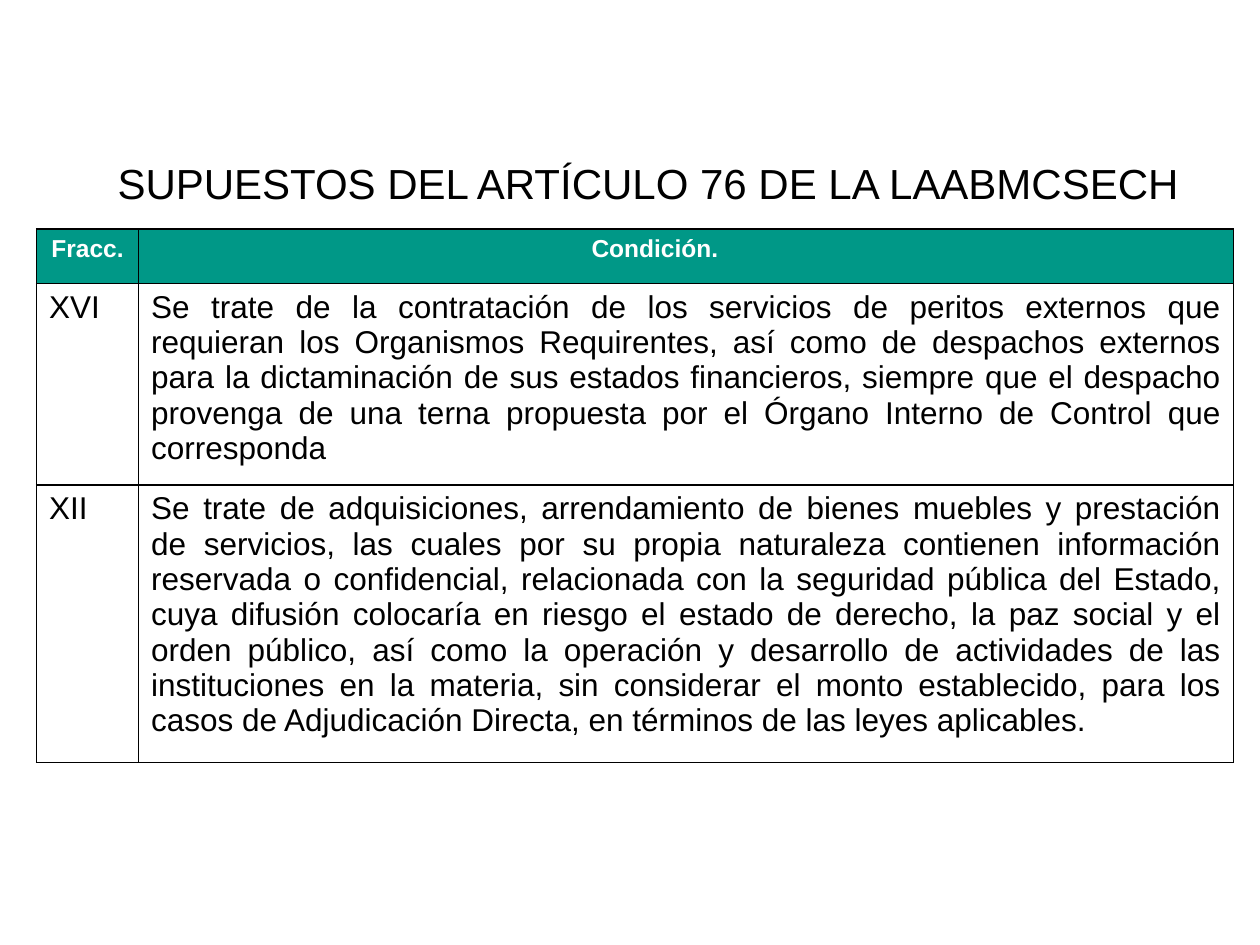
"""Build the slide listing the cases of article 76."""
from dataclasses import dataclass

import pptx
import pptx.dml.color
import pptx.enum.text
import pptx.oxml
import pptx.oxml.ns
import pptx.table
import pptx.util
from pptx.dml.color import RGBColor
from pptx.enum.text import PP_ALIGN
from pptx.util import Pt

BLACK = RGBColor(0x00, 0x00, 0x00)
WHITE = RGBColor(0xFF, 0xFF, 0xFF)
TEAL = RGBColor(0x00, 0x98, 0x87)
FONT = "Arial"


@dataclass
class CellStyle:
    size: int
    color: RGBColor
    bold: bool
    alignments: tuple
    fill: RGBColor | None = None


HEADER = CellStyle(14, WHITE, True, (PP_ALIGN.CENTER, PP_ALIGN.CENTER), TEAL)
BODY = CellStyle(18, BLACK, False, (PP_ALIGN.LEFT, PP_ALIGN.JUSTIFY))

COLUMN_WIDTHS = (58.3, 625.7)
ROW_HEIGHTS = (31, 58.3, 58.3)
ROWS = (
    (HEADER, ("Fracc.", "Condición.\t")),
    (BODY, (
        "XVI",
        "Se trate de la contratación de los servicios de peritos externos que "
        "requieran los Organismos Requirentes, así como de despachos externos "
        "para la dictaminación de sus estados financieros, siempre que el "
        "despacho provenga de una terna propuesta por el Órgano Interno de "
        "Control que corresponda",
    )),
    (BODY, (
        "XII",
        "Se trate de adquisiciones, arrendamiento de bienes muebles y "
        "prestación de servicios, las cuales por su propia naturaleza "
        "contienen información reservada o confidencial, relacionada con la "
        "seguridad pública del Estado, cuya difusión colocaría en riesgo el "
        "estado de derecho, la paz social y el orden público, así como la "
        "operación y desarrollo de actividades de las instituciones en la "
        "materia, sin considerar el monto establecido, para los casos de "
        "Adjudicación Directa, en términos de las leyes aplicables.",
    )),
)


def add_text(paragraph, text: str, size: int, color: RGBColor, bold: bool, alignment) -> None:
    paragraph.alignment = alignment
    run = paragraph.add_run()
    run.text = text
    run.font.name = FONT
    run.font.size = Pt(size)
    run.font.bold = bold
    run.font.color.rgb = color


def add_borders(cell: pptx.table._Cell) -> None:
    properties = cell._tc.get_or_add_tcPr()
    for side in ("lnL", "lnR", "lnT", "lnB"):
        properties.append(pptx.oxml.parse_xml(
            f'<a:{side} {pptx.oxml.ns.nsdecls("a")} w="{Pt(1)}">'
            f'<a:solidFill><a:srgbClr val="{BLACK}"/></a:solidFill></a:{side}>'
        ))


def fill_cell(cell: pptx.table._Cell, text: str, style: CellStyle, alignment) -> None:
    add_borders(cell)
    if style.fill is None:
        cell.fill.background()
    else:
        cell.fill.solid()
        cell.fill.fore_color.rgb = style.fill
    add_text(cell.text_frame.paragraphs[0], text, style.size, style.color, style.bold, alignment)


def add_cases_table(slide) -> None:
    table = slide.shapes.add_table(
        len(ROWS), len(COLUMN_WIDTHS), Pt(20.9), Pt(131),
        Pt(sum(COLUMN_WIDTHS)), Pt(sum(ROW_HEIGHTS)),
    ).table
    table.horz_banding = False
    table.first_row = False
    for column, width in zip(table.columns, COLUMN_WIDTHS):
        column.width = Pt(width)
    for row, height, (style, texts) in zip(table.rows, ROW_HEIGHTS, ROWS):
        row.height = Pt(height)
        for cell, text, alignment in zip(row.cells, texts, style.alignments):
            fill_cell(cell, text, style, alignment)


def add_title(slide) -> None:
    title = slide.shapes.title
    title.left, title.top, title.width, title.height = Pt(58.3), Pt(86.4), Pt(624.2), Pt(36)
    frame = title.text_frame
    frame.word_wrap = True
    frame.auto_size = pptx.enum.text.MSO_AUTO_SIZE.SHAPE_TO_FIT_TEXT
    frame.vertical_anchor = pptx.enum.text.MSO_ANCHOR.TOP
    add_text(frame.paragraphs[0], "SUPUESTOS DEL ARTÍCULO 76 DE LA LAABMCSECH",
             24, BLACK, False, PP_ALIGN.CENTER)


def main() -> None:
    presentation = pptx.Presentation()
    presentation.slide_width, presentation.slide_height = Pt(720), Pt(540)
    slide = presentation.slides.add_slide(presentation.slide_layouts.get_by_name("Title Only"))
    add_cases_table(slide)
    add_title(slide)
    presentation.save("out.pptx")


if __name__ == "__main__":
    main()
